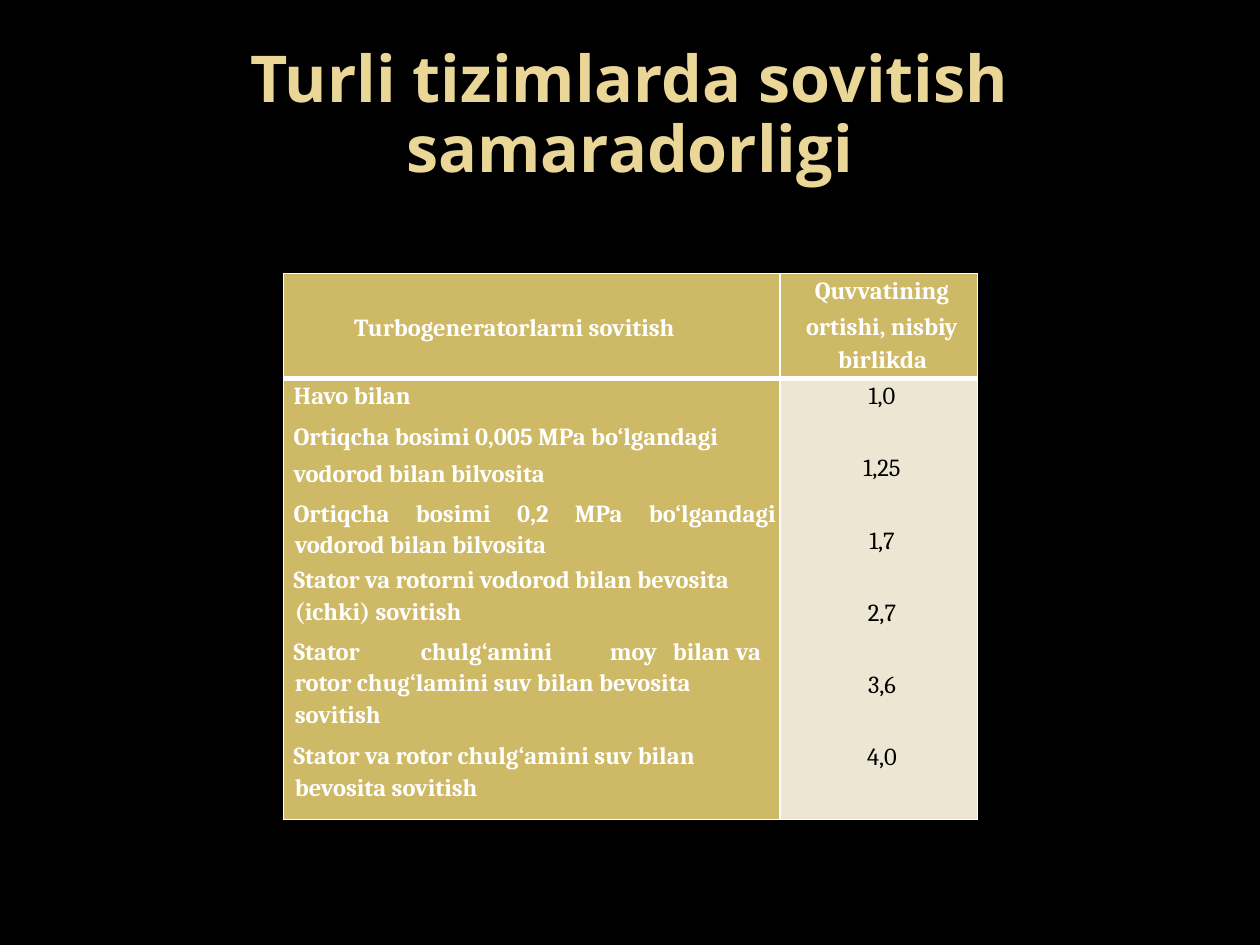
from pptx import Presentation, util as u
from pptx.dml.color import RGBColor
from pptx.enum import text
from pptx.oxml import parse_xml
from pptx.oxml.ns import nsdecls

Pt = u.Pt
THEME = {
    "back": "000000", "title": "EAD696", "gold": "CEB966", "cream": "EDE6D3",
    "light": "FFFFFF", "dark": "000000",
    "title_font": "Open Sans", "table_font": "Cambria",
    "title_size": 36.9, "table_size": 14,
}
LEFT, CENTER, JUSTIFY = text.PP_ALIGN.LEFT, text.PP_ALIGN.CENTER, text.PP_ALIGN.JUSTIFY
HANGING = 0.72


def write(para, words, color, font, size, bold, **layout):
    """Fill a paragraph with one formatted run."""
    for name, value in layout.items():
        setattr(para, name, value)
    span = para.add_run()
    span.text = words
    for name, value in {"name": font, "size": Pt(size), "bold": bold}.items():
        setattr(span.font, name, value)
    span.font.color.rgb = RGBColor.from_string(THEME[color])


def set_borders(cell, bottom):
    """Draw white lines round a cell, placed ahead of its fill."""
    widths = {"L": 1, "R": 1, "T": 1, "B": bottom}
    for place, (side, width) in enumerate(widths.items()):
        cell._tc.get_or_add_tcPr().insert(place, parse_xml(
            f'<a:ln{side} {nsdecls("a")} w="{Pt(width)}"><a:solidFill>'
            f'<a:srgbClr val="{THEME["light"]}"/></a:solidFill></a:ln{side}>'))


# Page
deck = Presentation()
deck.slide_width, deck.slide_height = Pt(720), Pt(540)
page = deck.slides.add_slide(deck.slide_layouts[6])
page.background.fill.solid()
page.background.fill.fore_color.rgb = RGBColor.from_string(THEME["back"])

# Title
box = page.shapes.add_textbox(Pt(36), Pt(21.6), Pt(648), Pt(90))
box.text_frame.word_wrap = True
box.text_frame.vertical_anchor = text.MSO_ANCHOR.MIDDLE
write(box.text_frame.paragraphs[0], "Turli tizimlarda sovitish samaradorligi",
      "title", THEME["title_font"], THEME["title_size"], True,
      alignment=CENTER, line_spacing=0.9)

# Table contents: words, alignment, line spacing, space after
heading = [("Turbogeneratorlarni sovitish", LEFT, 1.15, 0)]
power_heading = [
    ("Quvvatining", CENTER, 1.14, 2.4),
    ("ortishi, nisbiy birlikda", CENTER, 1.15, 0),
]
systems = [
    ("Havo bilan", LEFT, 1.14, 5.1),
    ("Ortiqcha bosimi 0,005 MPa bo‘lgandagi", JUSTIFY, 1.14, 2.4),
    ("vodorod bilan bilvosita", LEFT, 1.14, 5),
    ("Ortiqcha bosimi 0,2 MPa bo‘lgandagi vodorod bilan bilvosita", JUSTIFY, 1.12, 2.2),
    ("Stator va rotorni vodorod bilan bevosita (ichki) sovitish", LEFT, 1.11, 5.2),
    ("Stator \tchulg‘amini \tmoy \tbilan \tva \trotor chug‘lamini suv bilan bevosita sovitish",
     LEFT, 1.11, 5),
    ("Stator va rotor chulg‘amini suv bilan bevosita sovitish", LEFT, 1.15, 0),
]
powers = [(value, CENTER, 1.14, 22.9) for value in ("1,0", "1,25", "1,7", "2,7", "3,6")]
powers.append(("4,0", CENTER, 1.15, 0))

# Cells: contents, fill, text colour, bold, left indent, bottom line
cells = [
    [(heading, "gold", "light", True, 35.3, 3), (power_heading, "gold", "light", True, HANGING, 3)],
    [(systems, "gold", "light", True, HANGING, 1), (powers, "cream", "dark", False, HANGING, 1)],
]

# Table
frame = page.shapes.add_table(2, 2, Pt(162), Pt(156.2), Pt(396.7), Pt(308))
table = frame.table
table.horz_banding = False
for column, width in zip(table.columns, (283.7, 113)):
    column.width = Pt(width)
for row, height in zip(table.rows, (56.2, 204.5)):
    row.height = Pt(height)
frame.height = Pt(308)

for r, line in enumerate(cells):
    for c, (contents, fill, color, bold, indent, bottom) in enumerate(line):
        cell = table.cell(r, c)
        cell.fill.solid()
        cell.fill.fore_color.rgb = RGBColor.from_string(THEME[fill])
        margins = {"margin_left": 5.8, "margin_top": 0, "margin_right": 2.2, "margin_bottom": 0}
        for name, value in margins.items():
            setattr(cell, name, Pt(value))
        set_borders(cell, bottom)
        for i, (words, alignment, spacing, after) in enumerate(contents):
            para = cell.text_frame.add_paragraph() if i else cell.text_frame.paragraphs[0]
            write(para, words, color, THEME["table_font"], THEME["table_size"], bold,
                  alignment=alignment, line_spacing=spacing, space_after=Pt(after))
            para_format = para._p.get_or_add_pPr()
            para_format.set("marL", str(Pt(indent)))
            para_format.set("indent", str(Pt(-HANGING)))
table.cell(0, 0).vertical_anchor = text.MSO_ANCHOR.MIDDLE

deck.save("out.pptx")
